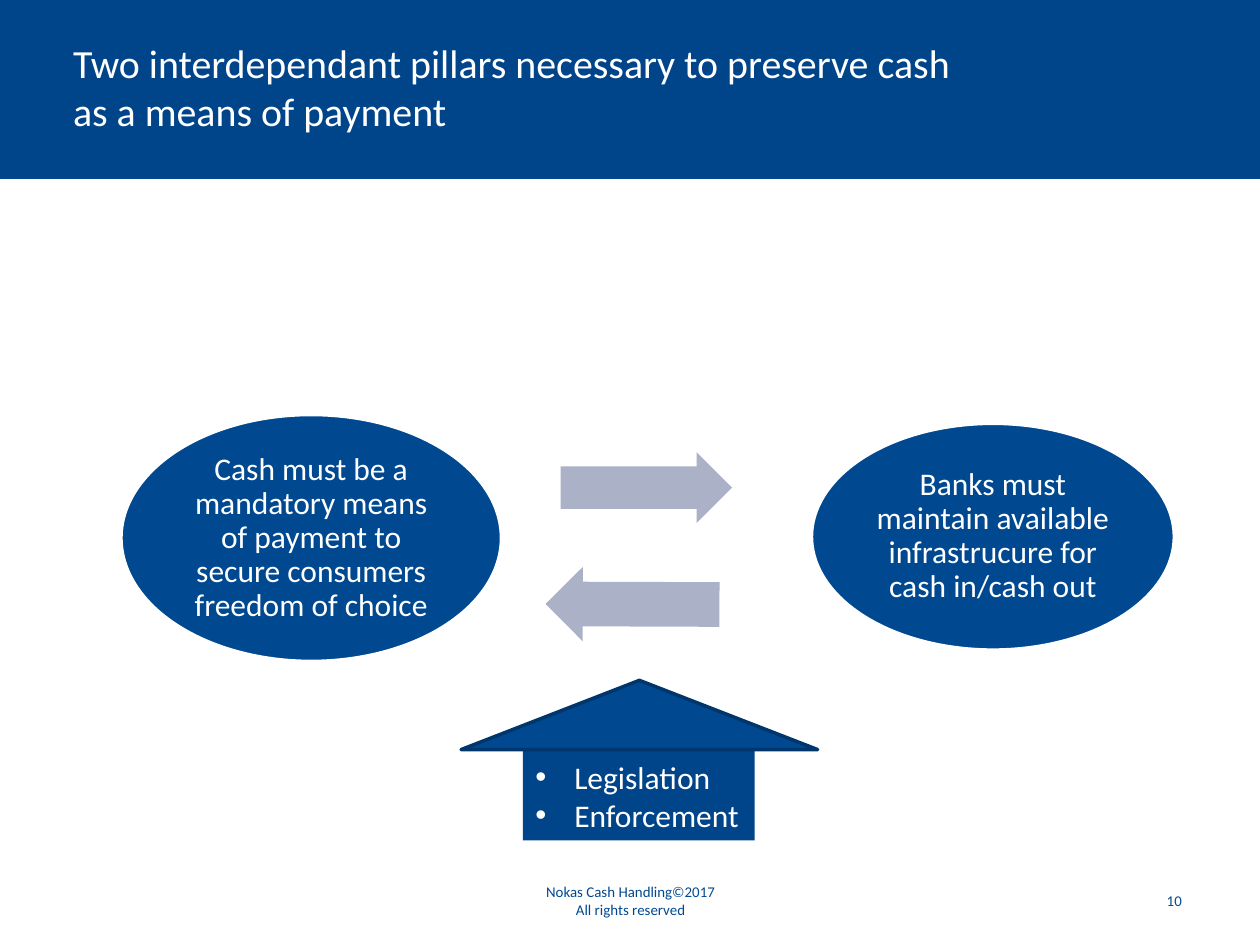
"""Build the slide on the two pillars that preserve cash as a means of payment."""
from lxml import etree
from pptx import Presentation
from pptx.dml.color import RGBColor
from pptx.enum.shapes import MSO_SHAPE
from pptx.enum.text import MSO_ANCHOR, PP_ALIGN
from pptx.oxml.ns import qn
from pptx.util import Inches, Pt

RECT, OVAL = MSO_SHAPE.RECTANGLE, MSO_SHAPE.OVAL
ARROW, ROOF = MSO_SHAPE.RIGHT_ARROW, MSO_SHAPE.ISOSCELES_TRIANGLE
LEFT, MID, RIGHT = PP_ALIGN.LEFT, PP_ALIGN.CENTER, PP_ALIGN.RIGHT
NAVY = RGBColor(0x00, 0x44, 0x89)
BLUE = RGBColor(0x00, 0x49, 0x90)
EDGE = RGBColor(0x00, 0x36, 0x6B)
GREY = RGBColor(0xAB, 0xB1, 0xC6)
WHITE = RGBColor(0xFF, 0xFF, 0xFF)

deck = Presentation()
deck.slide_width, deck.slide_height = Inches(10), Inches(7.5)
COL, ROW = deck.slide_width / 100, deck.slide_height / 100
slide = deck.slides.add_slide(deck.slide_layouts[6])


def draw(kind, x, y, w, h, fill, line=None):
    box = [int(v) for v in (x * COL, y * ROW, w * COL, h * ROW)]
    shape = slide.shapes.add_shape(kind, *box)
    shape.shadow.inherit = False
    shape.fill.solid()
    shape.fill.fore_color.rgb = fill
    if line is None:
        shape.line.fill.background()
    else:
        shape.line.color.rgb = line
        shape.line.width = Pt(2)
    return shape


def write(shape, text, size, color, align, side=0.12, edge=0.06):
    frame = shape.text_frame
    frame.text = text
    frame.word_wrap = True
    frame.vertical_anchor = MSO_ANCHOR.MIDDLE
    frame.margin_left = frame.margin_right = Inches(side)
    frame.margin_top = frame.margin_bottom = Inches(edge)
    for para in frame.paragraphs:
        para.alignment = align
        for run in para.runs:
            run.font.name = "Calibri"
            run.font.size = Pt(size)
            run.font.color.rgb = color
    return frame


draw(RECT, 0, 0, 100, 18.93, NAVY)

LABELS = [
    (5.8, 0, 73, 18.4, 22.8, WHITE, LEFT,
     "Two interdependant pillars necessary to preserve cash as a means of payment"),
    (34.2, 92.67, 31.7, 5.33, 8.5, BLUE, MID,
     "Nokas Cash Handling©2017\nAll rights reserved"),
    (71.7, 92.67, 23.3, 5.33, 8.5, BLUE, RIGHT, "10"),
]
for x, y, w, h, size, color, align, text in LABELS:
    label = slide.shapes.add_textbox(
        int(x * COL), int(y * ROW), int(w * COL), int(h * ROW))
    frame = write(label, text, size, color, align)
    if align == LEFT:
        frame.margin_left = 0

PILLARS = [
    (9.6, 43.87, 30.2, 26.13,
     "Cash must be a mandatory means of payment to secure consumers freedom of choice"),
    (64.4, 44.8, 28.8, 24,
     "Banks must maintain available infrastrucure for cash in/cash out"),
]
for x, y, w, h, text in PILLARS:
    oval = draw(OVAL, x, y, w, h, BLUE, WHITE)
    frame = write(oval, text, 18, WHITE, MID, 0.03, 0.03)
    frame.paragraphs[0].line_spacing = 0.9

ARROWS = [(44.5, 47.87, 13.6, 7.47, 0), (43.3, 60, 13.8, 7.87, 180.2)]
for x, y, w, h, turn in ARROWS:
    arrow = draw(ARROW, x, y, w, h, GREY)
    arrow.adjustments[0] = 0.6
    arrow.adjustments[1] = 0.5
    arrow.rotation = turn

base = draw(RECT, 41.5, 79.47, 18.4, 9.47, NAVY)
frame = write(base, "Legislation\nEnforcement", 18, WHITE, LEFT, 0.1, 0.05)
frame.word_wrap = False
for para in frame.paragraphs:
    props = para._p.get_or_add_pPr()
    props.set("marL", str(Inches(0.31)))
    props.set("indent", str(-Inches(0.31)))
    etree.SubElement(props, qn("a:buFont")).set("typeface", "Arial")
    etree.SubElement(props, qn("a:buChar")).set("char", "•")

draw(ROOF, 36.6, 72, 28.3, 7.33, BLUE, EDGE)

deck.save("out.pptx")
